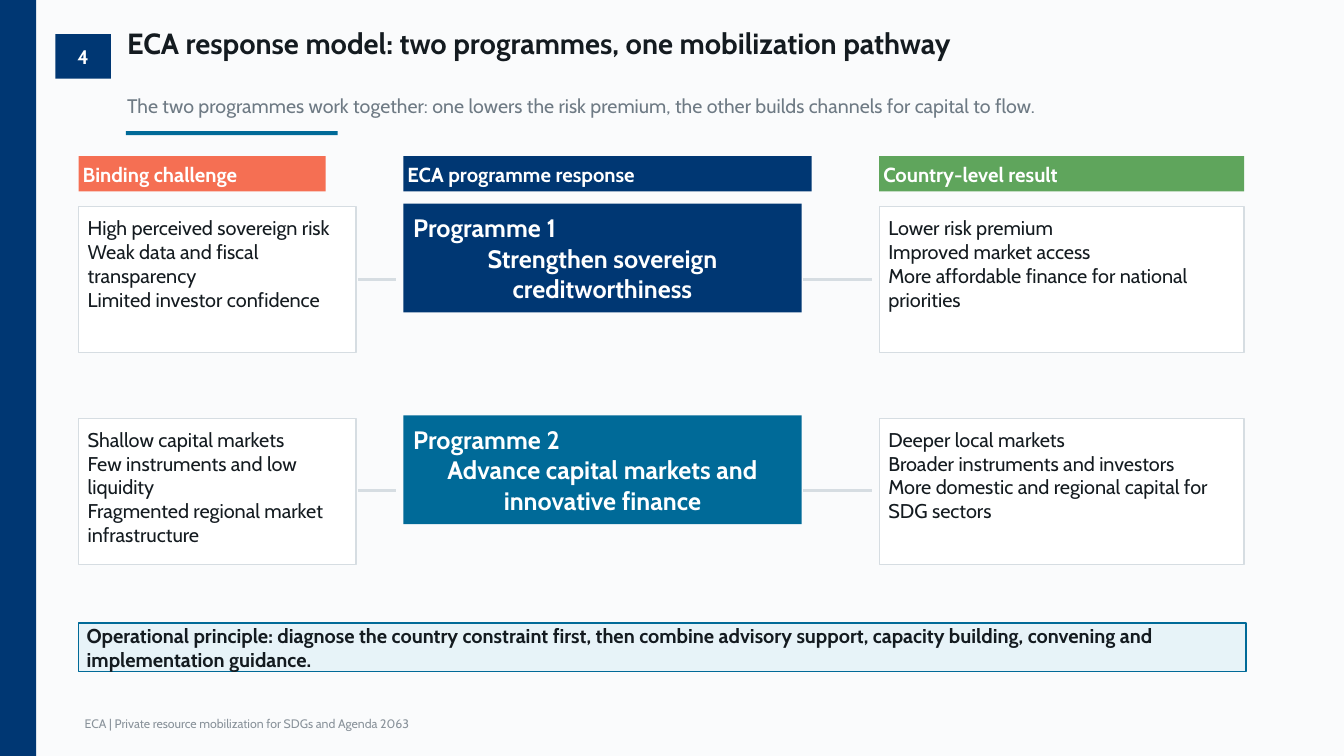
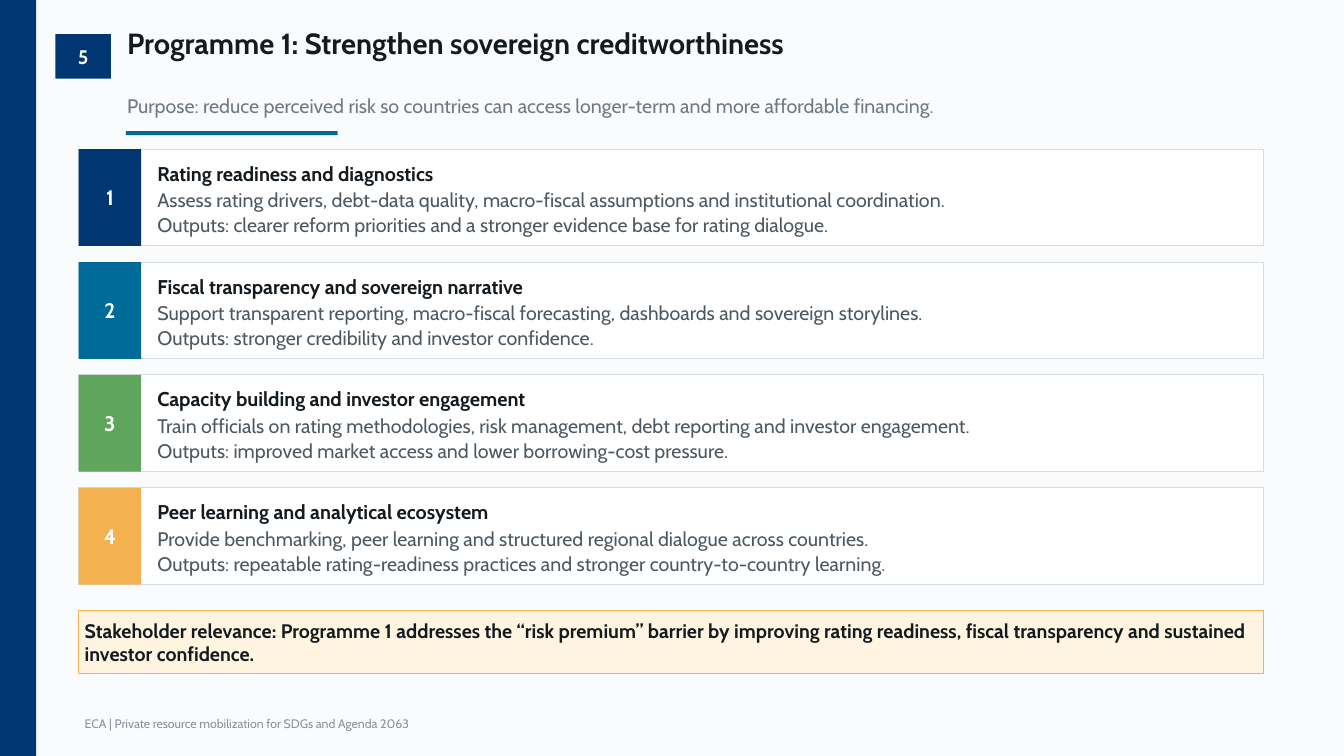
from lxml import etree
from pptx import Presentation
from pptx.dml.color import RGBColor as RGB
from pptx.enum.shapes import MSO_CONNECTOR as LINE, MSO_SHAPE as SHAPE
from pptx.enum.text import MSO_ANCHOR as ANCHOR, MSO_AUTO_SIZE as FIT, PP_ALIGN as ALIGN
from pptx.oxml.ns import qn
from pptx.util import Inches, Pt

# Shared style
FONT = "Cabin"
NAVY, TEAL = RGB(0x00, 0x37, 0x73), RGB(0x00, 0x6A, 0x98)
GREEN, CORAL = RGB(0x5F, 0xA5, 0x5C), RGB(0xF5, 0x6F, 0x53)
AMBER, CREAM = RGB(0xF4, 0xB1, 0x50), RGB(0xFE, 0xF4, 0xE0)
WHITE, PAPER = RGB(0xFF, 0xFF, 0xFF), RGB(0xFA, 0xFB, 0xFC)
ICE, RULE = RGB(0xE7, 0xF3, 0xF8), RGB(0xD6, 0xDD, 0xE2)
INK, BODY = RGB(0x14, 0x1B, 0x20), RGB(0x4C, 0x59, 0x63)
MUTED, FAINT = RGB(0x6E, 0x7A, 0x84), RGB(0x8A, 0x93, 0x9B)
LEFT = 0.78
FOOTER = "ECA | Private resource mobilization for SDGs and Agenda 2063"

# Content: model slide
MODEL = ("4", "ECA response model: two programmes, one mobilization pathway",
         "The two programmes work together: one lowers the risk premium, "
         "the other builds channels for capital to flow.")
HEADS = [  # left, width, colour, label
    (LEFT, 2.45, CORAL, "Binding challenge"),
    (4, 4.05, NAVY, "ECA programme response"),
    (8.72, 3.62, GREEN, "Country-level result"),
]
PATHS = [  # colour, challenges, programme, results
    (NAVY,
     ["High perceived sovereign risk", "Weak data and fiscal transparency",
      "Limited investor confidence"],
     ("Programme 1", "Strengthen sovereign creditworthiness"),
     ["Lower risk premium", "Improved market access",
      "More affordable finance for national priorities"]),
    (TEAL,
     ["Shallow capital markets", "Few instruments and low liquidity",
      "Fragmented regional market infrastructure"],
     ("Programme 2", "Advance capital markets and innovative finance"),
     ["Deeper local markets", "Broader instruments and investors",
      "More domestic and regional capital for SDG sectors"]),
]
MOTTO = ("Operational principle: diagnose the country constraint first, then combine "
         "advisory support, capacity building, convening and implementation guidance.")

# Content: programme slide
PROGRAMME = ("5", "Programme 1: Strengthen sovereign creditworthiness",
             "Purpose: reduce perceived risk so countries can access longer-term "
             "and more affordable financing.")
STEPS = [  # colour, heading, action, outputs
    (NAVY, "Rating readiness and diagnostics",
     "Assess rating drivers, debt-data quality, macro-fiscal assumptions and "
     "institutional coordination.",
     "Outputs: clearer reform priorities and a stronger evidence base for rating dialogue."),
    (TEAL, "Fiscal transparency and sovereign narrative",
     "Support transparent reporting, macro-fiscal forecasting, dashboards and "
     "sovereign storylines.",
     "Outputs: stronger credibility and investor confidence."),
    (GREEN, "Capacity building and investor engagement",
     "Train officials on rating methodologies, risk management, debt reporting and "
     "investor engagement.",
     "Outputs: improved market access and lower borrowing-cost pressure."),
    (AMBER, "Peer learning and analytical ecosystem",
     "Provide benchmarking, peer learning and structured regional dialogue across countries.",
     "Outputs: repeatable rating-readiness practices and stronger "
     "country-to-country learning."),
]
VALUE = ("Stakeholder relevance: Programme 1 addresses the “risk premium” barrier by "
         "improving rating readiness, fiscal transparency and sustained investor confidence.")


def write(shape, lines, inset=0.0, anchor=ANCHOR.TOP, **base):
    """Fill a shape with lines; a line is text or (text, format changes)."""
    frame = shape.text_frame
    frame.word_wrap, frame.auto_size = True, FIT.NONE
    frame.vertical_anchor = anchor
    frame.margin_left = frame.margin_right = Inches(inset)
    frame.margin_top = frame.margin_bottom = Inches(inset)
    for i, line in enumerate([lines] if isinstance(lines, str) else lines):
        text, more = (line, {}) if isinstance(line, str) else line
        look = {"size": 14, "color": INK, "bold": False, "align": ALIGN.LEFT,
                "after": 0, **base, **more}
        para = frame.paragraphs[0] if i == 0 else frame.add_paragraph()
        para.alignment, para.space_after = look["align"], Pt(look["after"])
        run = para.add_run()
        run.text = text
        font = run.font
        font.name, font.size, font.bold = FONT, Pt(look["size"]), look["bold"]
        font.color.rgb = look["color"]


def box(slide, x, y, w, h, fill, line=None, weight=1):
    shape = slide.shapes.add_shape(SHAPE.RECTANGLE, *map(Inches, (x, y, w, h)))
    shape.shadow.inherit = False
    shape.fill.solid()
    shape.fill.fore_color.rgb = fill
    if line is None:
        shape.line.fill.background()
    else:
        shape.line.color.rgb, shape.line.width = line, Pt(weight)
    return shape


def label(slide, x, y, w, h, lines, **look):
    write(slide.shapes.add_textbox(*map(Inches, (x, y, w, h))), lines, **look)


def link(slide, start, end, y):
    line = slide.shapes.add_connector(LINE.STRAIGHT, *map(Inches, (start, y, end, y)))
    line.line.color.rgb, line.line.width = RULE, Pt(2)
    etree.SubElement(line._element.spPr, qn("a:effectLst"))


def begin(deck, number, title, lead):
    """Add a slide with band, number, title, lead and footer."""
    slide = deck.slides.add_slide(deck.slide_layouts[5])
    box(slide, 0, 0, 0.36, 7.5, NAVY)
    write(box(slide, 0.55, 0.34, 0.55, 0.44, NAVY), number, inset=0.06,
          anchor=ANCHOR.MIDDLE, color=WHITE, bold=True, align=ALIGN.CENTER)
    head = slide.shapes.title
    head.left, head.top, head.width, head.height = map(Inches, (1.25, 0.24, 11.65, 0.62))
    write(head, title, inset=0.01, size=20.8, bold=True)
    label(slide, 1.25, 0.92, 11.45, 0.35, lead, inset=0.01, color=MUTED)
    box(slide, 1.25, 1.3, 2.1, 0.04, TEAL)
    label(slide, LEFT, 7.05, 8, 0.25, FOOTER, inset=0.06, size=8.8, color=FAINT)
    return slide


def add_model(deck):
    slide = begin(deck, *MODEL)
    # Column heads
    for x, w, color, text in HEADS:
        write(box(slide, x, 1.55, w, 0.35, color), text, inset=0.04,
              anchor=ANCHOR.MIDDLE, size=14.5, color=WHITE, bold=True)
    # One row per programme
    for i, (color, needs, (name, aim), gains) in enumerate(PATHS):
        y = 2.05 + 2.1 * i
        for x, w, lines in ((LEFT, 2.75, needs), (8.72, 3.62, gains)):
            write(box(slide, x, y, w, 1.45, WHITE, RULE), lines, inset=0.09, size=14.2)
        write(box(slide, 4, y - 0.03, 3.95, 1.08, color),
              [name, (aim, {"align": ALIGN.CENTER})], inset=0.1,
              anchor=ANCHOR.MIDDLE, size=18, color=WHITE, bold=True)
        for start, end in ((3.55, 3.93), (7.96, 8.65)):
            link(slide, start, end, y + 0.72)
    # Principle
    write(box(slide, LEFT, 6.18, 11.58, 0.48, ICE, TEAL), MOTTO, inset=0.08,
          anchor=ANCHOR.MIDDLE, size=14.3, bold=True)


def add_steps(deck):
    slide = begin(deck, *PROGRAMME)
    # Numbered cards
    for i, (color, head, action, output) in enumerate(STEPS):
        y = 1.48 + 1.12 * i
        box(slide, LEFT, y, 11.75, 0.96, WHITE, RULE, 0.75)
        write(box(slide, LEFT, y, 0.62, 0.96, color), str(i + 1), inset=0.02,
              anchor=ANCHOR.MIDDLE, size=15, color=WHITE, bold=True, align=ALIGN.CENTER)
        label(slide, 1.52, y + 0.08, 10.91, 0.84,
              [(head, {"size": 14.2, "color": INK, "bold": True, "after": 2}),
               (action, {"after": 1}), output], inset=0.04, color=BODY)
    # Relevance
    write(box(slide, LEFT, 6.06, 11.75, 0.62, CREAM, AMBER, 0.75), VALUE, inset=0.06,
          anchor=ANCHOR.MIDDLE, bold=True)


def main():
    deck = Presentation()
    deck.slide_width, deck.slide_height = Inches(13.33), Inches(7.5)
    back = deck.slide_master.background.fill
    back.solid()
    back.fore_color.rgb = PAPER
    add_model(deck)
    add_steps(deck)
    deck.save("out.pptx")


if __name__ == "__main__":
    main()
